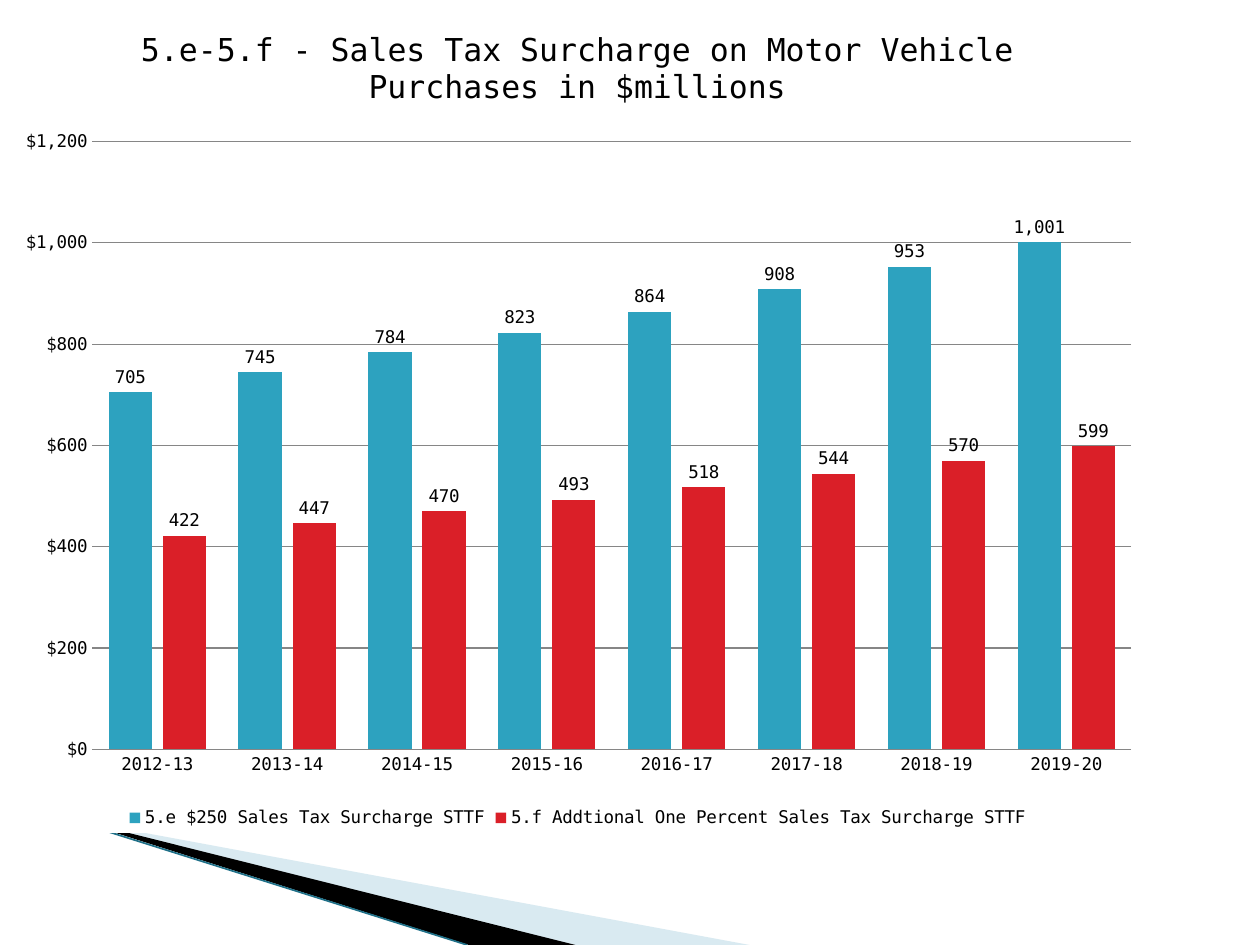
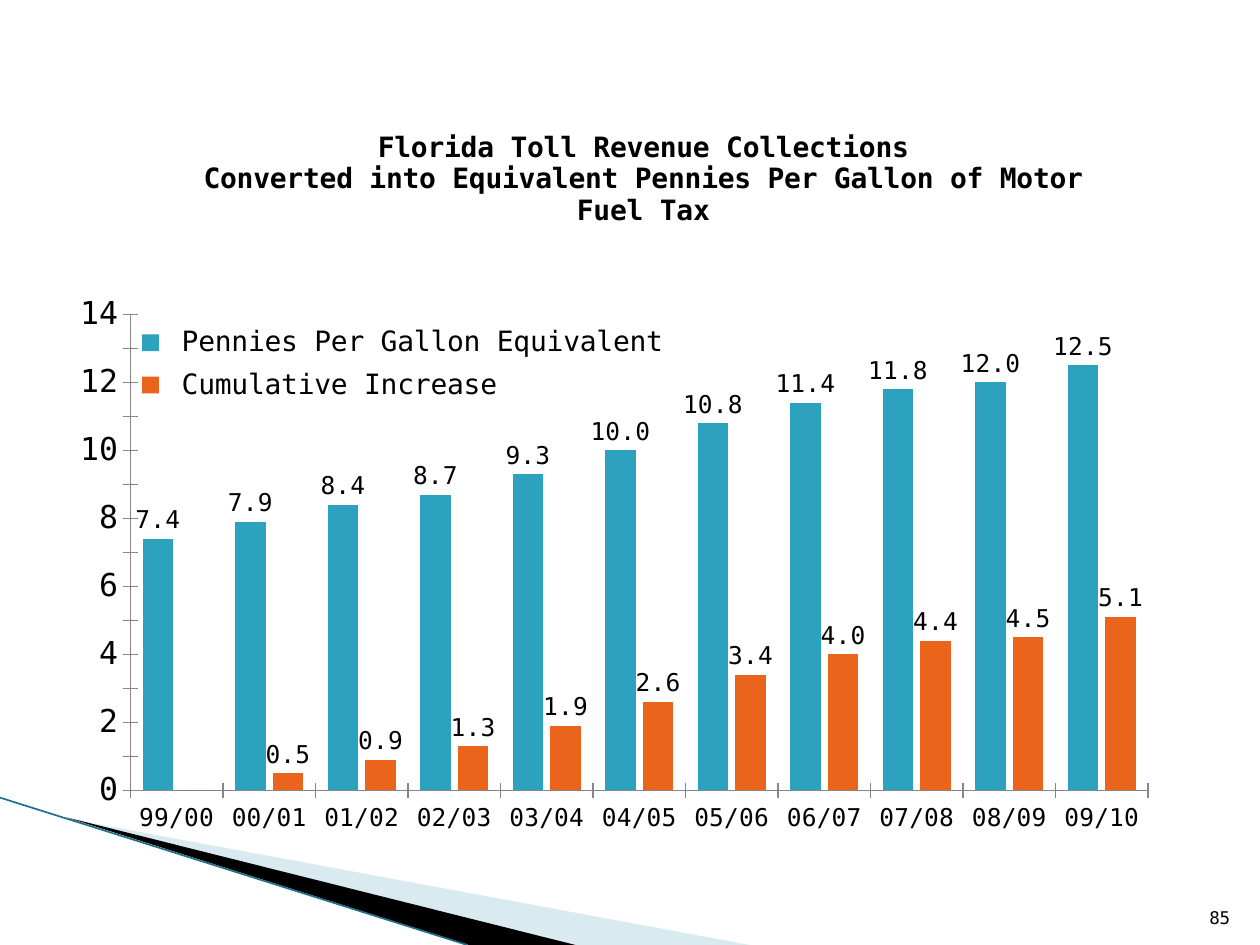
from lxml import etree
from pptx import Presentation
from pptx import util as u
from pptx.chart.data import CategoryChartData
from pptx.dml.color import RGBColor
from pptx.enum import chart as ch, shapes, text
from pptx.oxml import parse_xml
from pptx.oxml.ns import nsdecls, qn

FONT = "DejaVu Sans Mono"
BLACK, WHITE, GREY, BLUE = "000000", "FFFFFF", "868686", "2DA2BF"


def rgb(value):
    return RGBColor.from_string(value)


def place(element, index, values, inner=False):
    """Give a chart part a fixed place, as fractions of the chart area."""
    layout = element.find(qn("c:layout"))
    if layout is None:
        layout = etree.Element(qn("c:layout"))
        element.insert(index, layout)
    manual = etree.SubElement(layout, qn("c:manualLayout"))
    settings = [("layoutTarget", "inner")] if inner else []
    settings += [("xMode", "edge"), ("yMode", "edge"), *zip("xywh", values)]
    for name, value in settings:
        etree.SubElement(manual, qn("c:" + name)).set("val", str(value))


# Corner wedges: colour, opacity in percent, corners in cm
wedges = [
    ("A0CBDC", 40, [(1.4, 16.51), (15.11, 19.05), (11.58, 19.05)]),
    (BLACK, 100, [(1.35, 16.48), (11.6, 19.05), (9.45, 19.05)]),
]

# One chart per slide
pages = [
    {
        "box": (0, 0, 23.27, 16.79),
        "fill": WHITE,
        "title": "5.e-5.f - Sales Tax Surcharge on Motor Vehicle Purchases in $millions",
        "title_size": 18, "bold": False, "title_place": None,
        "size": 10, "category_size": 10, "legend_size": 10, "label_size": 10,
        "legend_place": None, "plot_place": (0.08, 0.17, 0.9, 0.73),
        "tick": ch.XL_TICK_MARK.NONE, "grid": True,
        "maximum": 1200, "step": 200, "gap": 75, "overlap": -25,
        "axis_format": '"$"#,##0', "label_format": "#,##0",
        "categories": [f"{year}-{year % 100 + 1}" for year in range(2012, 2020)],
        "series": [
            ("5.e $250 Sales Tax Surcharge STTF", BLUE,
             [705, 745, 784, 823, 864, 908, 953, 1001]),
            ("5.f Addtional One Percent Sales Tax Surcharge STTF", "DA1F28",
             [422, 447, 470, 493, 518, 544, 570, 599]),
        ],
        "number": None,
    },
    {
        "box": (0.66, 0.79, 24.05, 17.45),
        "fill": None,
        "title": "Florida Toll Revenue Collections\n"
                 "Converted into Equivalent Pennies Per Gallon of Motor Fuel Tax",
        "title_size": 16, "bold": True, "title_place": (0.14, 0.1),
        "size": 18, "category_size": 14, "legend_size": 16, "label_size": 14,
        "legend_place": (0.08, 0.32, 0.46, 0.11),
        "plot_place": (0.082, 0.318, 0.853, 0.55),
        "tick": ch.XL_TICK_MARK.CROSS, "grid": False,
        "maximum": 14, "step": 1, "gap": 80, "overlap": -23,
        "axis_format": "0", "label_format": "#,##0.0",
        "categories": [f"{year % 100:02}/{(year + 1) % 100:02}" for year in range(1999, 2010)],
        "series": [
            (" Pennies Per Gallon Equivalent", BLUE,
             [7.4, 7.9, 8.4, 8.7, 9.3, 10, 10.8, 11.4, 11.8, 12, 12.5]),
            (" Cumulative Increase", "EB641B",
             [0, 0.5, 0.9, 1.3, 1.9, 2.6, 3.4, 4, 4.4, 4.5, 5.1]),
        ],
        "number": "85",
    },
]

presentation = Presentation()
presentation.slide_width, presentation.slide_height = u.Cm(25.4), u.Cm(19.05)

for page in pages:
    slide = presentation.slides.add_slide(presentation.slide_layouts[6])

    # Corner decoration
    for color, opacity, corners in wedges:
        points = [(u.Cm(x), u.Cm(y)) for x, y in corners]
        builder = slide.shapes.build_freeform(*points[0])
        builder.add_line_segments(points[1:])
        wedge = builder.convert_to_shape()
        wedge.shadow.inherit = False
        wedge.line.fill.background()
        wedge.fill.solid()
        wedge.fill.fore_color.rgb = rgb(color)
        if opacity < 100:
            fill_color = wedge.fill._xPr.find(".//" + qn("a:srgbClr"))
            etree.SubElement(fill_color, qn("a:alpha")).set("val", str(opacity * 1000))
    edge = slide.shapes.add_connector(
        shapes.MSO_CONNECTOR.STRAIGHT, u.Cm(0), u.Cm(16.08), u.Cm(9.42), u.Cm(19.05))
    edge.line.color.rgb = rgb("1F7088")
    edge.line.width = u.Pt(0.95)
    etree.SubElement(edge._element.spPr, qn("a:effectLst"))

    # Slide number
    if page["number"]:
        box = slide.shapes.add_textbox(u.Cm(24.03), u.Cm(17.81), u.Cm(1.02), u.Cm(1.02))
        frame = box.text_frame
        frame.word_wrap = True
        frame.vertical_anchor = text.MSO_ANCHOR.BOTTOM
        frame.text = page["number"]
        paragraph = frame.paragraphs[0]
        paragraph.alignment = text.PP_ALIGN.RIGHT
        font = paragraph.runs[0].font
        font.name, font.size = FONT, u.Pt(10)
        font.color.rgb = rgb(BLACK)

    # Chart
    data = CategoryChartData()
    data.categories = page["categories"]
    for name, color, values in page["series"]:
        data.add_series(name, values)
    chart = slide.shapes.add_chart(
        ch.XL_CHART_TYPE.COLUMN_CLUSTERED, *map(u.Cm, page["box"]), data).chart
    chart.font.name, chart.font.size = FONT, u.Pt(page["size"])
    chart.font.color.rgb = rgb(BLACK)
    if page["fill"]:
        chart.element.find(qn("c:chart")).addnext(parse_xml(
            f'<c:spPr {nsdecls("c", "a")}><a:solidFill><a:srgbClr val="{page["fill"]}"/>'
            '</a:solidFill><a:ln><a:noFill/></a:ln></c:spPr>'))

    # Chart title
    chart.has_title = True
    title = chart.chart_title
    title.text_frame.text = page["title"]
    for paragraph in title.text_frame.paragraphs:
        paragraph.alignment = text.PP_ALIGN.CENTER
        font = paragraph.runs[0].font
        font.name, font.size, font.bold = FONT, u.Pt(page["title_size"]), page["bold"]
        font.color.rgb = rgb(BLACK)
    if page["title_place"]:
        place(title._element, 1, page["title_place"])

    # Legend
    chart.has_legend = True
    legend = chart.legend
    legend.position = ch.XL_LEGEND_POSITION.BOTTOM
    legend.include_in_layout = False
    legend.font.name, legend.font.size = FONT, u.Pt(page["legend_size"])
    legend.font.color.rgb = rgb(BLACK)
    if page["legend_place"]:
        place(legend._element, 1, page["legend_place"])

    # Axes
    category_axis, value_axis = chart.category_axis, chart.value_axis
    for axis, size in ((category_axis, page["category_size"]), (value_axis, page["size"])):
        axis.major_tick_mark = page["tick"]
        axis.minor_tick_mark = ch.XL_TICK_MARK.NONE
        axis.format.line.color.rgb = rgb(GREY)
        axis.tick_labels.font.name = FONT
        axis.tick_labels.font.size = u.Pt(size)
        axis.tick_labels.font.color.rgb = rgb(BLACK)
    value_axis.minimum_scale, value_axis.maximum_scale = 0, page["maximum"]
    value_axis.major_unit = page["step"]
    value_axis.tick_labels.number_format = page["axis_format"]
    value_axis.tick_labels.number_format_is_linked = False
    value_axis.has_major_gridlines = page["grid"]
    if page["grid"]:
        value_axis.major_gridlines.format.line.color.rgb = rgb(GREY)
        value_axis.format.line.fill.background()

    # Columns and their labels
    plot = chart.plots[0]
    plot.vary_by_categories = False
    plot.gap_width, plot.overlap = page["gap"], page["overlap"]
    place(chart.element.find(".//" + qn("c:plotArea")), 0, page["plot_place"], inner=True)
    for series, (name, color, values) in zip(plot.series, page["series"]):
        series.format.fill.solid()
        series.format.fill.fore_color.rgb = rgb(color)
        labels = series.data_labels
        labels.show_value = True
        labels.position = ch.XL_LABEL_POSITION.OUTSIDE_END
        labels.number_format = page["label_format"]
        labels.number_format_is_linked = False
        labels.font.name, labels.font.size = FONT, u.Pt(page["label_size"])
        labels.font.color.rgb = rgb(BLACK)
        if values[0] == 0:
            labels._element.insert(0, parse_xml(
                f'<c:dLbl {nsdecls("c")}><c:idx val="0"/><c:delete val="1"/></c:dLbl>'))

presentation.save("out.pptx")
